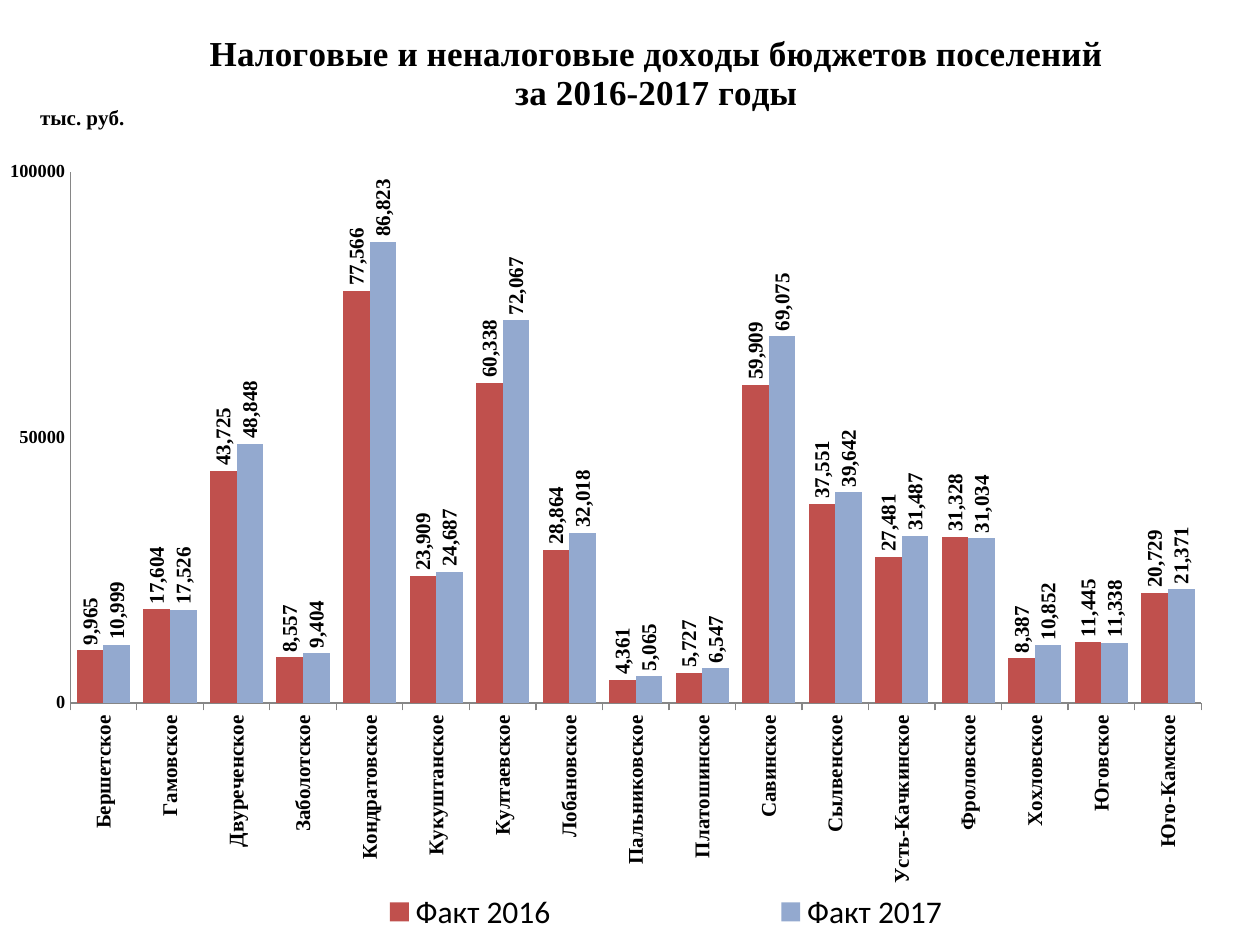
from dataclasses import dataclass

from lxml.etree import SubElement
from pptx import Presentation
from pptx.chart.data import CategoryChartData
from pptx.dml.color import RGBColor
from pptx.enum.chart import XL_CHART_TYPE, XL_LABEL_POSITION, XL_LEGEND_POSITION, XL_TICK_LABEL_POSITION, XL_TICK_MARK
from pptx.oxml.ns import qn
from pptx.util import Pt


@dataclass(frozen=True)
class Theme:
    heading_font: str = "Times New Roman"
    legend_font: str = "Calibri"
    text: RGBColor = RGBColor(0, 0, 0)
    axis: RGBColor = RGBColor(0x86, 0x86, 0x86)
    years: tuple = (RGBColor(0xC0, 0x50, 0x4D), RGBColor(0x93, 0xA9, 0xCF))
    title_size: float = 20
    legend_size: float = 18
    label_size: float = 12
    scale_size: float = 10.5


THEME = Theme()
TITLE = "Налоговые и неналоговые доходы бюджетов поселений\nза 2016-2017 годы"
UNIT = "тыс. руб."
YEARS = ("Факт 2016", "Факт 2017")
INCOME = [
    ("Бершетское", 9965, 10999),
    ("Гамовское", 17604, 17526),
    ("Двуреченское", 43725, 48848),
    ("Заболотское", 8557, 9404),
    ("Кондратовское", 77566, 86823),
    ("Кукуштанское", 23909, 24687),
    ("Култаевское", 60338, 72067),
    ("Лобановское", 28864, 32018),
    ("Пальниковское", 4361, 5065),
    ("Платошинское", 5727, 6547),
    ("Савинское", 59909, 69075),
    ("Сылвенское", 37551, 39642),
    ("Усть-Качкинское", 27481, 31487),
    ("Фроловское", 31328, 31034),
    ("Хохловское", 8387, 10852),
    ("Юговское", 11445, 11338),
    ("Юго-Камское", 20729, 21371),
]


def style(font, size, name=THEME.heading_font, bold=True):
    font.size, font.name, font.bold = Pt(size), name, bold
    font.color.rgb = THEME.text


def place(element, **fractions):
    for old in element.findall(qn("c:layout")):
        element.remove(old)
    layout = element.makeelement(qn("c:layout"), {})
    overlay = element.find(qn("c:overlay"))
    if overlay is None:
        element.insert(0, layout)
    else:
        overlay.addprevious(layout)
    manual = SubElement(layout, qn("c:manualLayout"))
    if overlay is None:
        SubElement(manual, qn("c:layoutTarget"), val="inner")
    for side in ("x", "y"):
        SubElement(manual, qn(f"c:{side}Mode"), val="edge")
    for side, fraction in fractions.items():
        SubElement(manual, qn(f"c:{side}"), val=str(fraction))


def rotate(element, degrees):
    body = next(element.iter(qn("a:bodyPr")))
    body.set("rot", str(degrees * 60000))
    body.set("vert", "horz")


def write_title(title, text, size, x, y):
    frame = title.text_frame
    frame.text = text
    for paragraph in frame.paragraphs:
        for run in paragraph.runs:
            style(run.font, size)
    rotate(title._element, 0)
    place(title._element, x=x, y=y)


def add_income_chart(slide):
    data = CategoryChartData(number_format="0")
    data.categories = [settlement for settlement, *_ in INCOME]
    for year, amounts in zip(YEARS, list(zip(*INCOME))[1:]):
        data.add_series(year, amounts)
    chart = slide.shapes.add_chart(
        XL_CHART_TYPE.COLUMN_CLUSTERED, 0, 0, Pt(692), Pt(540), data).chart
    style(chart.font, 10, THEME.legend_font, False)

    chart.has_title = True
    write_title(chart.chart_title, TITLE, THEME.title_size, 0.17, 0.03)
    place(chart._chartSpace.chart.plotArea, x=0.058, y=0.182, w=0.934, h=0.562)

    chart.has_legend = True
    chart.legend.position = XL_LEGEND_POSITION.RIGHT
    chart.legend.include_in_layout = False
    style(chart.legend.font, THEME.legend_size, THEME.legend_font, False)
    place(chart.legend._element, x=0.14, y=0.94, w=0.82, h=0.05)
    return chart


def format_axes(chart):
    settlements, amounts = chart.category_axis, chart.value_axis
    for axis, size in ((settlements, THEME.label_size), (amounts, THEME.scale_size)):
        axis.has_major_gridlines = False
        axis.minor_tick_mark = XL_TICK_MARK.NONE
        axis.format.line.color.rgb = THEME.axis
        style(axis.tick_labels.font, size)
    settlements.major_tick_mark = XL_TICK_MARK.OUTSIDE
    settlements.tick_label_position = XL_TICK_LABEL_POSITION.LOW
    rotate(settlements._element.find(qn("c:txPr")), -90)

    amounts.major_tick_mark = XL_TICK_MARK.NONE
    amounts.minimum_scale, amounts.maximum_scale, amounts.major_unit = 0, 100000, 50000
    amounts.tick_labels.number_format = "0"
    amounts.tick_labels.number_format_is_linked = False
    amounts.has_title = True
    write_title(amounts.axis_title, UNIT, THEME.label_size, 0.03, 0.107)


def format_columns(plot):
    plot.gap_width, plot.overlap = 50, 0
    plot.vary_by_categories = False
    for year, color in zip(plot.series, THEME.years):
        year.format.fill.solid()
        year.format.fill.fore_color.rgb = color
        labels = year.data_labels
        labels.show_value = True
        labels.position = XL_LABEL_POSITION.OUTSIDE_END
        labels.number_format = "#,##0"
        labels.number_format_is_linked = False
        style(labels.font, THEME.label_size)
        rotate(labels._element, -90)


def main():
    deck = Presentation()
    deck.slide_width, deck.slide_height = Pt(720), Pt(540)
    slide = deck.slides.add_slide(deck.slide_layouts[6])
    chart = add_income_chart(slide)
    format_axes(chart)
    format_columns(chart.plots[0])
    deck.save("out.pptx")


if __name__ == "__main__":
    main()
